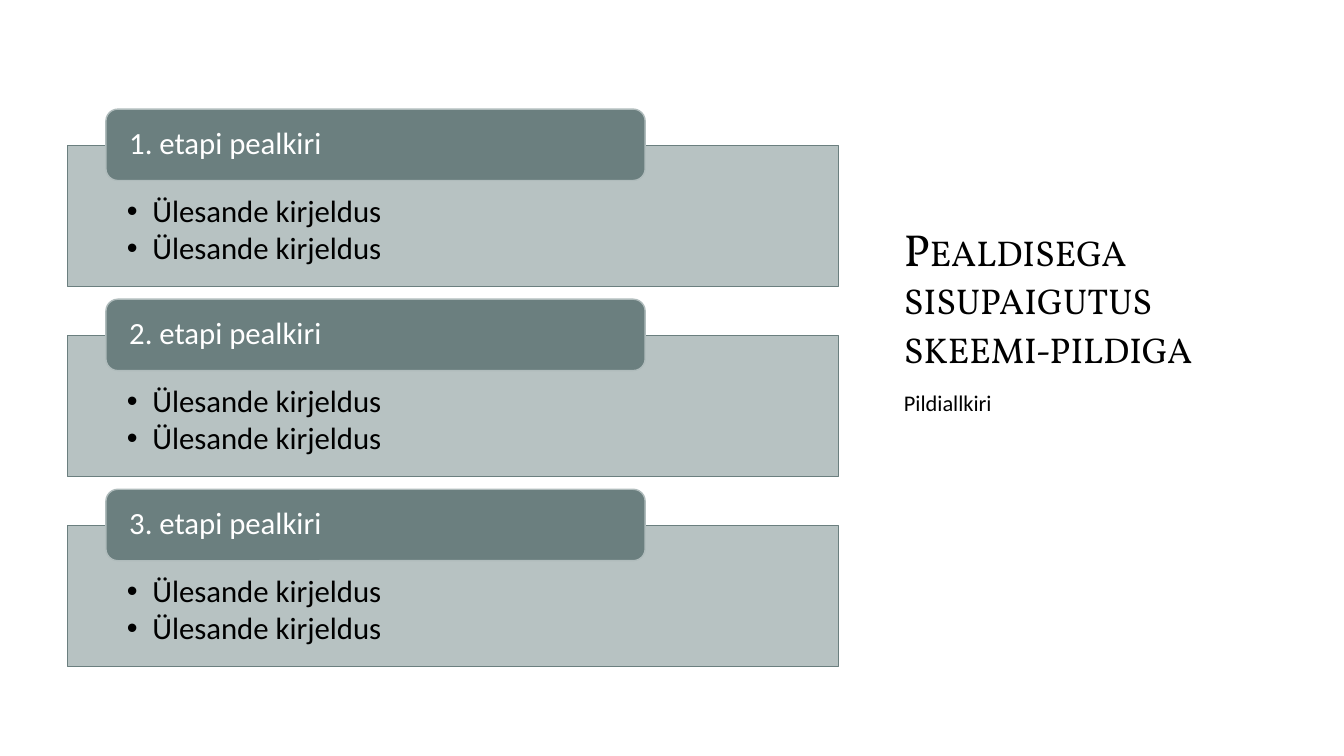
from lxml import etree
from pptx import Presentation
from pptx import util as u
from pptx.dml.color import RGBColor
from pptx.enum import shapes, text
from pptx.oxml.ns import qn

COLOURS = {"panel": "B0BCBC", "header": "6B7F7F", "dark": "000000", "light": "FFFFFF"}


def colour(name):
    return RGBColor.from_string(COLOURS[name])


def write(shape, lines, size=22, font="Calibri", ink="dark", anchor="top",
          margins=(0.25, 0.13, 0.25, 0.13), after=0, bullets=False, small_caps=False):
    """Fill a shape with one paragraph per line; margins are in cm, left to bottom."""
    frame = shape.text_frame
    frame.word_wrap = True
    frame.auto_size = text.MSO_AUTO_SIZE.NONE
    frame.vertical_anchor = getattr(text.MSO_ANCHOR, anchor.upper())
    (frame.margin_left, frame.margin_top,
     frame.margin_right, frame.margin_bottom) = map(u.Cm, margins)
    for index, line in enumerate(lines):
        para = frame.add_paragraph() if index else frame.paragraphs[0]
        para.alignment = text.PP_ALIGN.LEFT
        para.line_spacing = 0.9
        para.space_before = u.Pt(0)
        para.space_after = u.Pt(after)
        if bullets:
            props = para._p.get_or_add_pPr()
            props.set("marL", str(u.Cm(0.64)))
            props.set("indent", str(-u.Cm(0.64)))
            etree.SubElement(props, qn("a:buFont")).set("typeface", "Arial")
            etree.SubElement(props, qn("a:buChar")).set("char", "•")
        span = para.add_run()
        span.text = line
        span.font.size = u.Pt(size)
        span.font.name = font
        span.font.color.rgb = colour(ink)
        if small_caps:
            span.font._element.set("cap", "small")


deck = Presentation()
deck.slide_width, deck.slide_height = u.Cm(33.87), u.Cm(19.05)
page = deck.slides.add_slide(deck.slide_layouts[5])

# Title
title = page.shapes.title
title.left, title.top, title.width, title.height = map(u.Cm, (22.53, 3.18, 9.65, 6.35))
write(title, ["Pealdisega sisupaigutus skeemi-pildiga"], size=32, font="Vollkorn",
      anchor="bottom", small_caps=True)

# Three stages: a panel with tasks and a header over its top edge
for stage in range(3):
    top = 3.66 + stage * 4.79
    panel = page.shapes.add_shape(shapes.MSO_SHAPE.RECTANGLE,
                                  u.Cm(1.7), u.Cm(top), u.Cm(19.43), u.Cm(3.56))
    header = page.shapes.add_shape(shapes.MSO_SHAPE.ROUNDED_RECTANGLE,
                                   u.Cm(2.67), u.Cm(top - 0.91), u.Cm(13.59), u.Cm(1.8))
    for box, fill, line in ((panel, "panel", "header"), (header, "header", "panel")):
        box.shadow.inherit = False
        box.fill.solid()
        box.fill.fore_color.rgb = colour(fill)
        box.line.color.rgb = colour(line)
        box.line.width = u.Pt(1)
    panel_colour = panel._element.spPr.find(qn("a:solidFill"))[0]
    etree.SubElement(panel_colour, qn("a:alpha")).set("val", "90000")

    write(panel, ["Ülesande kirjeldus"] * 2, margins=(1.5, 1.27, 1.5, 0.43),
          after=3, bullets=True)
    write(header, [f"{stage + 1}. etapi pealkiri"], ink="light", anchor="middle",
          margins=(0.5, 0, 0.5, 0))

# Caption
caption = page.shapes.add_textbox(u.Cm(22.53), u.Cm(9.75), u.Cm(9.65), u.Cm(5.84))
write(caption, ["Pildiallkiri"], size=16)

deck.save("out.pptx")
